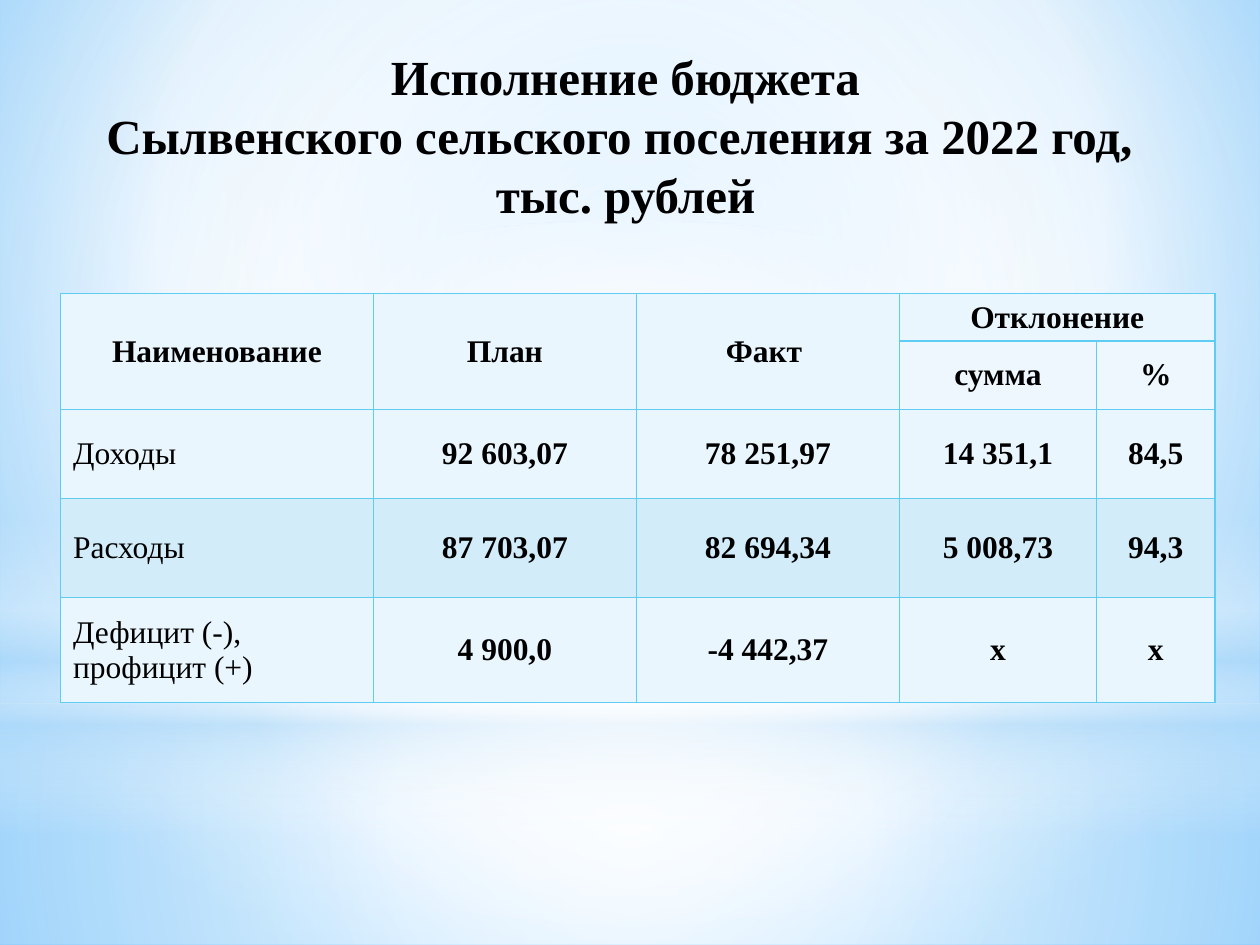
from lxml import etree
from pptx import Presentation
from pptx.dml.color import RGBColor
from pptx.enum.shapes import MSO_SHAPE
from pptx.enum.text import MSO_ANCHOR, MSO_AUTO_SIZE, PP_ALIGN
from pptx.oxml import parse_xml
from pptx.oxml.ns import qn
from pptx.util import Pt

RECT, OVAL = MSO_SHAPE.RECTANGLE, MSO_SHAPE.OVAL
LEFT, CENTER = PP_ALIGN.LEFT, PP_ALIGN.CENTER
MIDDLE = MSO_ANCHOR.MIDDLE
FONT = "Times New Roman"
BLACK = RGBColor(0x00, 0x00, 0x00)
HEAD = RGBColor(0xEA, 0xF6, 0xFD)
SUBHEAD = RGBColor(0xED, 0xF7, 0xFD)
BAND = RGBColor(0xD2, 0xEC, 0xFA)
BORDER = RGBColor(0x5E, 0xCC, 0xF3)
WHITE = RGBColor(0xFF, 0xFF, 0xFF)
PALE = RGBColor(0xB4, 0xDC, 0xFA)
SKY = RGBColor(0x9E, 0xD5, 0xFF)
BLUE = RGBColor(0x5B, 0xB9, 0xFF)
NS = 'xmlns:a="http://schemas.openxmlformats.org/drawingml/2006/main"'
NS_P = 'xmlns:p="http://schemas.openxmlformats.org/presentationml/2006/main"'

TITLE = [" Исполнение бюджета \vСылвенского сельского поселения за 2022 год, ",
         "тыс. рублей"]
ROWS = [
    ["Наименование", "План", "Факт ", "Отклонение", ""],
    ["", "", "", "сумма", "%"],
    ["Доходы", "92 603,07", "78 251,97", "14 351,1", "84,5"],
    ["Расходы", "87 703,07", "82 694,34", "5 008,73", "94,3"],
    ["Дефицит (-), профицит (+)", "4 900,0", "-4 442,37", "х", "х"],
]
ROW_FILLS = [HEAD, SUBHEAD, HEAD, BAND, HEAD]
MERGES = [(0, 0, 1, 0), (0, 1, 1, 1), (0, 2, 1, 2), (0, 3, 0, 4)]
COL_WIDTHS = [178.8, 150.3, 150.3, 112.6, 67.8]
ROW_HEIGHTS = [21.6, 38.9, 51.1, 56.6, 60]
CENTRED = (50, 50, 50, 50)
BACKDROP = [
    (RECT, 0, 401.8, 720, 138.2,
     [(0, WHITE, 91), (37, WHITE, 76), (100, PALE, 79)], CENTRED),
    (RECT, 0, 0, 720, 401.8,
     [(0, WHITE, 89), (48, WHITE, 62), (100, PALE, 79)], CENTRED),
    (RECT, 0, 296.6, 720, 180,
     [(0, WHITE, 0), (29, WHITE, 30), (45, PALE, 40), (55, WHITE, 26),
      (65, PALE, 60), (100, WHITE, 0)], None),
    (OVAL, 0, 126, 720, 401.8, [(0, WHITE, 100), (56, WHITE, 0)], CENTRED),
]


def gradient(stops, focus):
    gs = "".join(f'<a:gs pos="{pos * 1000}"><a:srgbClr val="{color}">'
                 f'<a:alpha val="{alpha * 1000}"/></a:srgbClr></a:gs>'
                 for pos, color, alpha in stops)
    shade = '<a:lin ang="5400000" scaled="0"/>'
    if focus:
        rect = " ".join(f'{side}="{v * 1000}"' for side, v in zip("ltrb", focus))
        shade = f'<a:path path="circle"><a:fillToRect {rect}/></a:path>'
    return parse_xml(f'<a:gradFill {NS} rotWithShape="1"><a:gsLst>{gs}</a:gsLst>'
                     f'{shade}</a:gradFill>')


def write(p, text, size=18, bold=True, align=CENTER):
    p.text = text
    p.alignment = align
    for r in p.runs:
        r.font.name, r.font.size = FONT, Pt(size)
        r.font.bold, r.font.color.rgb = bold, BLACK


def set_background(s):
    bg = parse_xml(f'<p:bg {NS_P} {NS}><p:bgPr><a:effectLst/></p:bgPr></p:bg>')
    stops = [(0, SKY, 100), (60, WHITE, 100), (100, BLUE, 100)]
    bg[0].insert(0, gradient(stops, (20, 10, 20, 60)))
    s.shapes._spTree.getparent().insert(0, bg)


def add_backdrop(s):
    for kind, x, y, w, h, stops, focus in BACKDROP:
        sp = s.shapes.add_shape(kind, Pt(x), Pt(y), Pt(w), Pt(h))
        sp.shadow.inherit = False
        sp.line.fill.background()
        geom = sp._element.spPr.find(qn("a:prstGeom"))
        geom.addnext(gradient(stops, focus))


def add_title(s):
    sp = s.shapes.title
    sp.left, sp.top, sp.width, sp.height = Pt(8.6), Pt(23.8), Pt(697.7), Pt(106.6)
    tf = sp.text_frame
    tf.word_wrap, tf.auto_size = True, MSO_AUTO_SIZE.NONE
    tf.vertical_anchor = MIDDLE
    for i, text in enumerate(TITLE):
        p = tf.add_paragraph() if i else tf.paragraphs[0]
        write(p, text, size=28)
    s.shapes._spTree.append(sp._element)


def add_borders(cell):
    tcPr = cell._tc.get_or_add_tcPr()
    for i, side in enumerate(("lnL", "lnR", "lnT", "lnB")):
        ln = etree.Element(qn(f"a:{side}"), w=str(Pt(1)))
        fill = etree.SubElement(ln, qn("a:solidFill"))
        etree.SubElement(fill, qn("a:srgbClr"), val=str(BORDER))
        tcPr.insert(i, ln)


def add_budget_table(s):
    table = s.shapes.add_table(len(ROWS), len(COL_WIDTHS), Pt(34.6), Pt(167.8),
                               Pt(sum(COL_WIDTHS)), Pt(sum(ROW_HEIGHTS))).table
    for col, width in zip(table.columns, COL_WIDTHS):
        col.width = Pt(width)
    for row, height in zip(table.rows, ROW_HEIGHTS):
        row.height = Pt(height)
    for r, (texts, color) in enumerate(zip(ROWS, ROW_FILLS)):
        for c, text in enumerate(texts):
            cell = table.cell(r, c)
            cell.vertical_anchor = MIDDLE
            cell.fill.solid()
            cell.fill.fore_color.rgb = color
            add_borders(cell)
            label = r > 1 and c == 0
            if text:
                write(cell.text_frame.paragraphs[0], text, bold=not label,
                      align=LEFT if label else CENTER)
    for r1, c1, r2, c2 in MERGES:
        table.cell(r1, c1).merge(table.cell(r2, c2))


def main():
    prs = Presentation()
    prs.slide_width, prs.slide_height = Pt(720), Pt(540)
    s = prs.slides.add_slide(prs.slide_layouts[5])
    set_background(s)
    add_backdrop(s)
    add_budget_table(s)
    add_title(s)
    prs.save("out.pptx")


if __name__ == "__main__":
    main()
